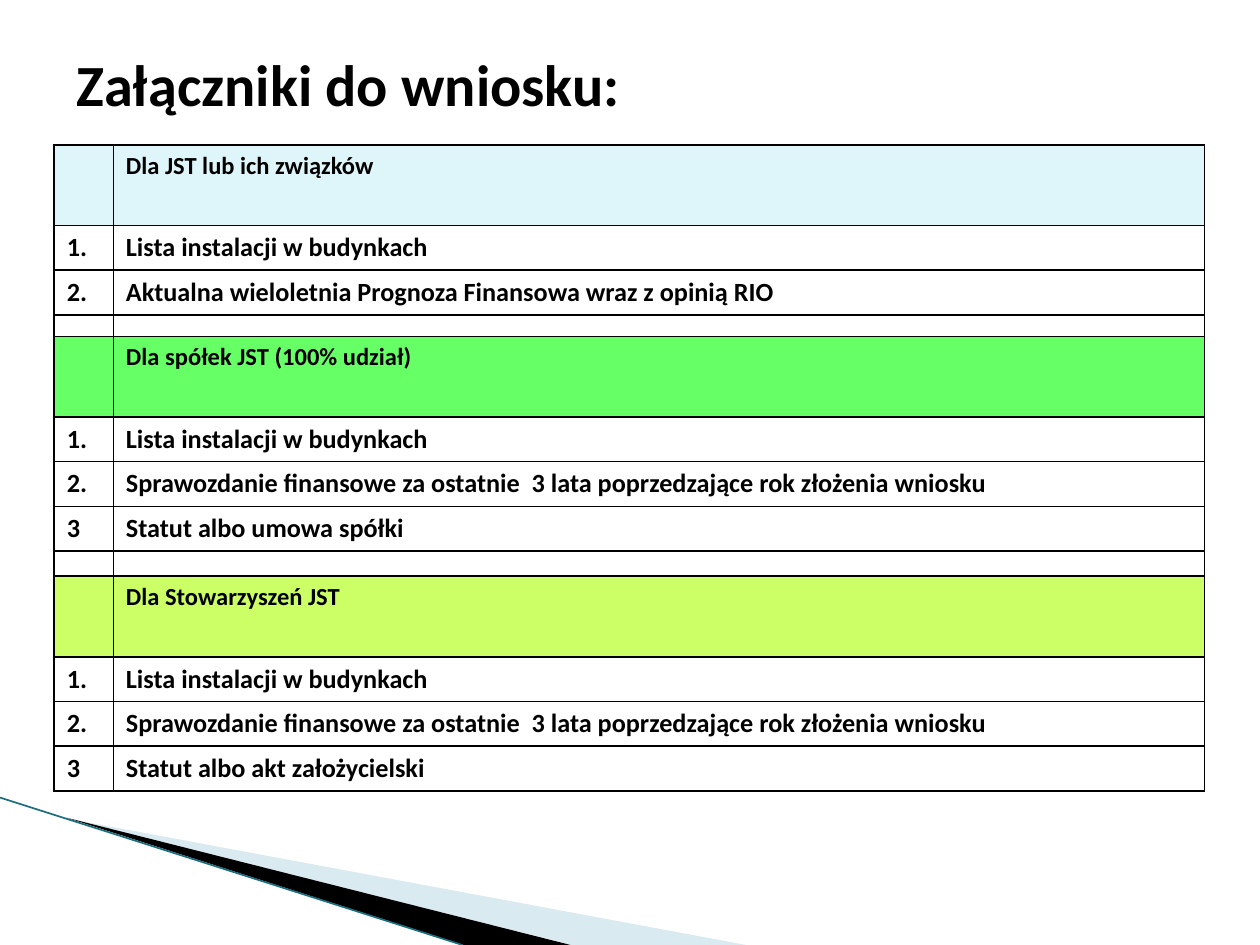
from lxml import etree
from pptx import Presentation
from pptx.dml.color import RGBColor
from pptx.enum.shapes import MSO_CONNECTOR
from pptx.enum.text import MSO_ANCHOR
from pptx.oxml.ns import qn
from pptx.util import Inches, Pt

STRAIGHT = MSO_CONNECTOR.STRAIGHT
TOP = MSO_ANCHOR.TOP
FONT = "Calibri"
BLACK, WHITE = "000000", "FFFFFF"

HEADER_HEIGHT, ITEM_HEIGHT = 0.64, 0.355
INSTALLATIONS = "Lista instalacji w budynkach"
REPORTS = "Sprawozdanie finansowe za ostatnie  3 lata poprzedzające rok złożenia wniosku"

# Heading, heading fill, numbered items, height of the empty row below
SECTIONS = [
    ("Dla JST lub ich związków", "DEF5FA",
     [("1.", INSTALLATIONS),
      ("2.", "Aktualna wieloletnia Prognoza Finansowa wraz z opinią RIO")], 0.17),
    ("Dla spółek JST (100% udział)", "66FF66",
     [("1.", INSTALLATIONS), ("2.", REPORTS), ("3", "Statut albo umowa spółki")], 0.2),
    ("Dla Stowarzyszeń JST", "CCFF66",
     [("1.", INSTALLATIONS), ("2.", REPORTS), ("3", "Statut albo akt założycielski")], None),
]


def color(hex_text):
    return RGBColor.from_string(hex_text)


def write_text(frame, text, size, bold=True, fill=BLACK):
    para = frame.paragraphs[0]
    if not text:
        # An empty cell takes its line height from the end mark
        etree.SubElement(para._p, qn("a:endParaRPr"), sz=str(size * 100))
        return
    span = para.add_run()
    span.text = text
    span.font.name = FONT
    span.font.size = Pt(size)
    span.font.bold = bold
    span.font.color.rgb = color(fill)


def add_wedge(page, points, fill, opacity=100):
    corners = [(Inches(x), Inches(y)) for x, y in points]
    builder = page.shapes.build_freeform(*corners[0], scale=1.0)
    builder.add_line_segments(corners[1:], close=True)
    wedge = builder.convert_to_shape()
    wedge.shadow.inherit = False
    wedge.fill.solid()
    wedge.fill.fore_color.rgb = color(fill)
    wedge.line.fill.background()
    if opacity < 100:
        tint = wedge._element.spPr.find(".//" + qn("a:srgbClr"))
        etree.SubElement(tint, qn("a:alpha"), val=str(opacity * 1000))


def add_line(page, start, end, fill, width):
    line = page.shapes.add_connector(STRAIGHT, *map(Inches, start + end))
    line.line.color.rgb = color(fill)
    line.line.width = Pt(width)
    etree.SubElement(line._element.spPr, qn("a:effectLst"))


def add_title(page, text):
    box = page.shapes.add_textbox(Inches(0.51), Inches(0.28), Inches(9), Inches(0.8))
    frame = box.text_frame
    frame.word_wrap = True
    frame.vertical_anchor = TOP
    frame.margin_top = Inches(0.1)
    write_text(frame, text, 33.3)


def set_borders(cell, fill=BLACK, width=1):
    properties = cell._tc.get_or_add_tcPr()
    for index, side in enumerate(("lnL", "lnR", "lnT", "lnB")):
        border = etree.Element(qn("a:" + side), w=str(Pt(width)))
        solid = etree.SubElement(border, qn("a:solidFill"))
        etree.SubElement(solid, qn("a:srgbClr"), val=fill)
        properties.insert(index, border)


def table_rows():
    """Give each row as its two texts, fill, text size and height."""
    rows = []
    for heading, fill, items, gap in SECTIONS:
        rows.append((("", heading), fill, 14, HEADER_HEIGHT))
        rows += [(item, WHITE, 15, ITEM_HEIGHT) for item in items]
        if gap:
            rows.append((("", ""), WHITE, 8, gap))
    return rows


def add_attachments(page):
    rows = table_rows()
    height = sum(row[-1] for row in rows)
    table = page.shapes.add_table(len(rows), 2, Inches(0.43), Inches(1.15),
                                  Inches(9.13), Inches(height)).table
    table.first_row = table.horz_banding = False
    table.columns[0].width = Inches(0.47)
    table.columns[1].width = Inches(8.66)
    for line, (texts, fill, size, row_height) in zip(table.rows, rows):
        line.height = Inches(row_height)
        for cell, text in zip(line.cells, texts):
            cell.fill.solid()
            cell.fill.fore_color.rgb = color(fill)
            if not any(texts):
                cell.margin_top = cell.margin_bottom = 0
            write_text(cell.text_frame, text, size)
            set_borders(cell)


def main():
    deck = Presentation()
    deck.slide_width, deck.slide_height = Inches(10), Inches(7.5)
    page = deck.slides.add_slide(deck.slide_layouts[6])

    # Corner decoration
    add_wedge(page, [(0.55, 6.5), (5.92, 7.5), (4.54, 7.5)], "A0CBDC", opacity=40)
    add_wedge(page, [(0.53, 6.49), (4.53, 7.5), (3.68, 7.5)], BLACK)
    add_line(page, (0, 6.33), (3.67, 7.5), "1A6E80", 0.95)

    # Title and table
    add_title(page, "Załączniki do wniosku:")
    add_attachments(page)
    deck.save("out.pptx")


if __name__ == "__main__":
    main()
